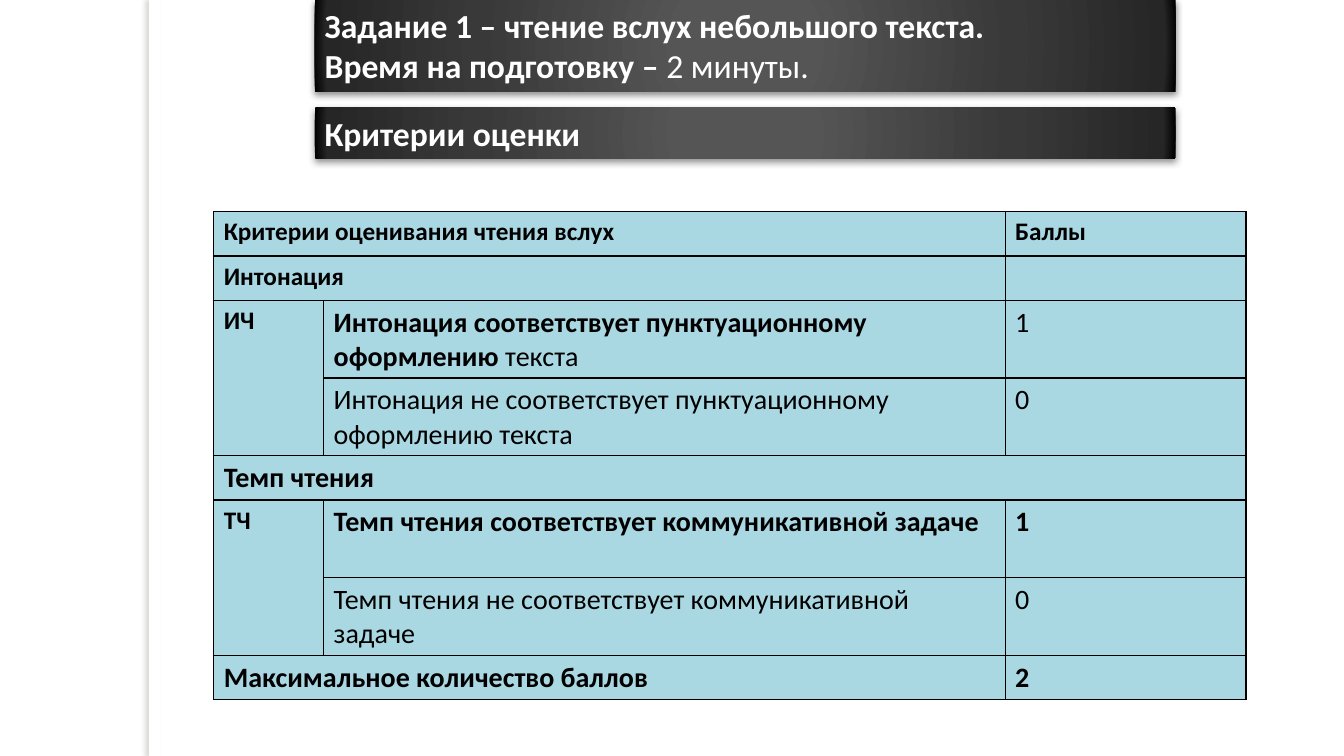
import lxml.etree
import pptx
import pptx.dml.color
import pptx.enum.shapes
import pptx.enum.text
import pptx.oxml
import pptx.oxml.ns
import pptx.util

THEME = {
    "font": "Calibri",
    "white": "FFFFFF",
    "black": "000000",
    "cell": "A9D7E2",
    "edge_shadow": "736F63",
    "gradient": [(0, "555555"), (15, "555555"), (62, "393939"), (97, "262626"), (100, "000000")],
    "heading": 24,
    "label": 18,
    "text": 20,
}
NAMESPACE = pptx.oxml.ns.nsdecls("a")
RGB = pptx.dml.color.RGBColor.from_string

deck = pptx.Presentation()
deck.slide_width = pptx.util.Inches(13.33)
deck.slide_height = pptx.util.Inches(7.5)
page = deck.slides.add_slide(deck.slide_layouts[5])


def area(left, top, width, height):
    return [
        int(share * side / 100)
        for share, side in zip((left, top, width, height), (deck.slide_width, deck.slide_height) * 2)
    ]


def write(frame, paragraphs, size, color):
    for index, spans in enumerate(paragraphs):
        para = frame.add_paragraph() if index else frame.paragraphs[0]
        para.alignment = pptx.enum.text.PP_ALIGN.LEFT
        for text, bold in spans:
            span = para.add_run()
            span.text = text
            formats = {"name": THEME["font"], "size": pptx.util.Pt(size), "bold": bold}
            for name, value in formats.items():
                setattr(span.font, name, value)
            span.font.color.rgb = RGB(color)


RECTANGLE = pptx.enum.shapes.MSO_SHAPE.RECTANGLE
edge = page.shapes.add_shape(RECTANGLE, *area(11.1, 0, 0.83, 100))
edge.fill.solid()
edge.fill.fore_color.rgb = RGB(THEME["white"])
task_box = page.shapes.title
criteria_box = page.shapes.add_shape(RECTANGLE, *area(23.41, 14.27, 64.06, 6.67))
for name, value in zip(("left", "top", "width", "height"), area(23.41, 0, 64.06, 12.13)):
    setattr(task_box, name, value)

headings = [
    (task_box, [
        [("Задание 1 – чтение вслух небольшого текста.", True)],
        [("Время на подготовку – ", True), ("2 минуты.", False)],
    ]),
    (criteria_box, [[("Критерии оценки", True)]]),
]
stops = "".join(
    f'<a:gs pos="{position * 1000}"><a:srgbClr val="{color}"/></a:gs>'
    for position, color in THEME["gradient"]
)
for box, paragraphs in headings:
    box._element.spPr.append(pptx.oxml.parse_xml(
        f'<a:gradFill {NAMESPACE} rotWithShape="1"><a:gsLst>{stops}</a:gsLst><a:path path="circle">'
        '<a:fillToRect l="50000" t="50000" r="50000" b="50000"/></a:path></a:gradFill>'
    ))
    frame = box.text_frame
    formats = {
        "word_wrap": True,
        "auto_size": pptx.enum.text.MSO_AUTO_SIZE.SHAPE_TO_FIT_TEXT,
        "vertical_anchor": pptx.enum.text.MSO_ANCHOR.TOP,
    }
    for name, value in formats.items():
        setattr(frame, name, value)
    write(frame, paragraphs, THEME["heading"], THEME["white"])

shadows = [
    (edge, THEME["edge_shadow"], 25, 3, 3, 180),
    (task_box, THEME["black"], 43, 5, 2, 90),
    (criteria_box, THEME["black"], 43, 5, 2, 90),
]
for box, color, opacity, blur, distance, angle in shadows:
    box.line.fill.background()
    box._element.spPr.append(pptx.oxml.parse_xml(
        f'<a:effectLst {NAMESPACE}><a:outerShdw blurRad="{blur * 12700}" dist="{distance * 12700}" '
        f'dir="{angle * 60000}" rotWithShape="0"><a:srgbClr val="{color}">'
        f'<a:alpha val="{opacity * 1000}"/></a:srgbClr></a:outerShdw></a:effectLst>'
    ))

column_shares = [8.18, 50.71, 17.93]
short, tall = 5.87, 10.27
row_shares = [short, short, tall, tall, short, tall, tall, short]
table = page.shapes.add_table(
    len(row_shares), len(column_shares), *area(15.9, 28, sum(column_shares), sum(row_shares))
).table
table.first_row = table.horz_banding = False
for column, share in zip(table.columns, column_shares):
    column.width = int(deck.slide_width * share / 100)
for row, share in zip(table.rows, row_shares):
    row.height = int(deck.slide_height * share / 100)

for cell in table.iter_cells():
    properties = cell._tc.get_or_add_tcPr()
    for side in ("lnL", "lnR", "lnT", "lnB"):
        properties.append(pptx.oxml.parse_xml(
            f'<a:{side} {NAMESPACE} w="12700"><a:solidFill><a:srgbClr val="{THEME["black"]}"/>'
            f'</a:solidFill></a:{side}>'
        ))
    cell.fill.solid()
    cell.fill.fore_color.rgb = RGB(THEME["cell"])

merges = [((0, 0), (0, 1)), ((1, 0), (1, 1)), ((2, 0), (3, 0)),
          ((4, 0), (4, 2)), ((5, 0), (6, 0)), ((7, 0), (7, 1))]
for first, last in merges:
    table.cell(*first).merge(table.cell(*last))

entries = [
    (0, 0, "label", [[("Критерии оценивания чтения вслух", True)]]),
    (0, 2, "label", [[("Баллы", True)]]),
    (1, 0, "label", [[("Интонация", True)]]),
    (2, 0, "label", [[("ИЧ", True)]]),
    (2, 1, "text", [[("Интонация соответствует пунктуационному оформлению ", True), ("текста", False)]]),
    (2, 2, "text", [[("1", False)]]),
    (3, 1, "text", [[("Интонация не соответствует пунктуационному", False)], [("оформлению текста", False)]]),
    (3, 2, "text", [[("0", False)]]),
    (4, 0, "text", [[("Темп чтения", True)]]),
    (5, 0, "label", [[("ТЧ", True)]]),
    (5, 1, "text", [[("Темп чтения соответствует коммуникативной задаче", True)]]),
    (5, 2, "text", [[("1", True)]]),
    (6, 1, "text", [[("Темп чтения не соответствует коммуникативной задаче", False)]]),
    (6, 2, "text", [[("0", False)]]),
    (7, 0, "text", [[("Максимальное количество баллов", True)]]),
    (7, 2, "text", [[("2", True)]]),
]
for row, column, role, paragraphs in entries:
    write(table.cell(row, column).text_frame, paragraphs, THEME[role], THEME["black"])

deck.save("out.pptx")
